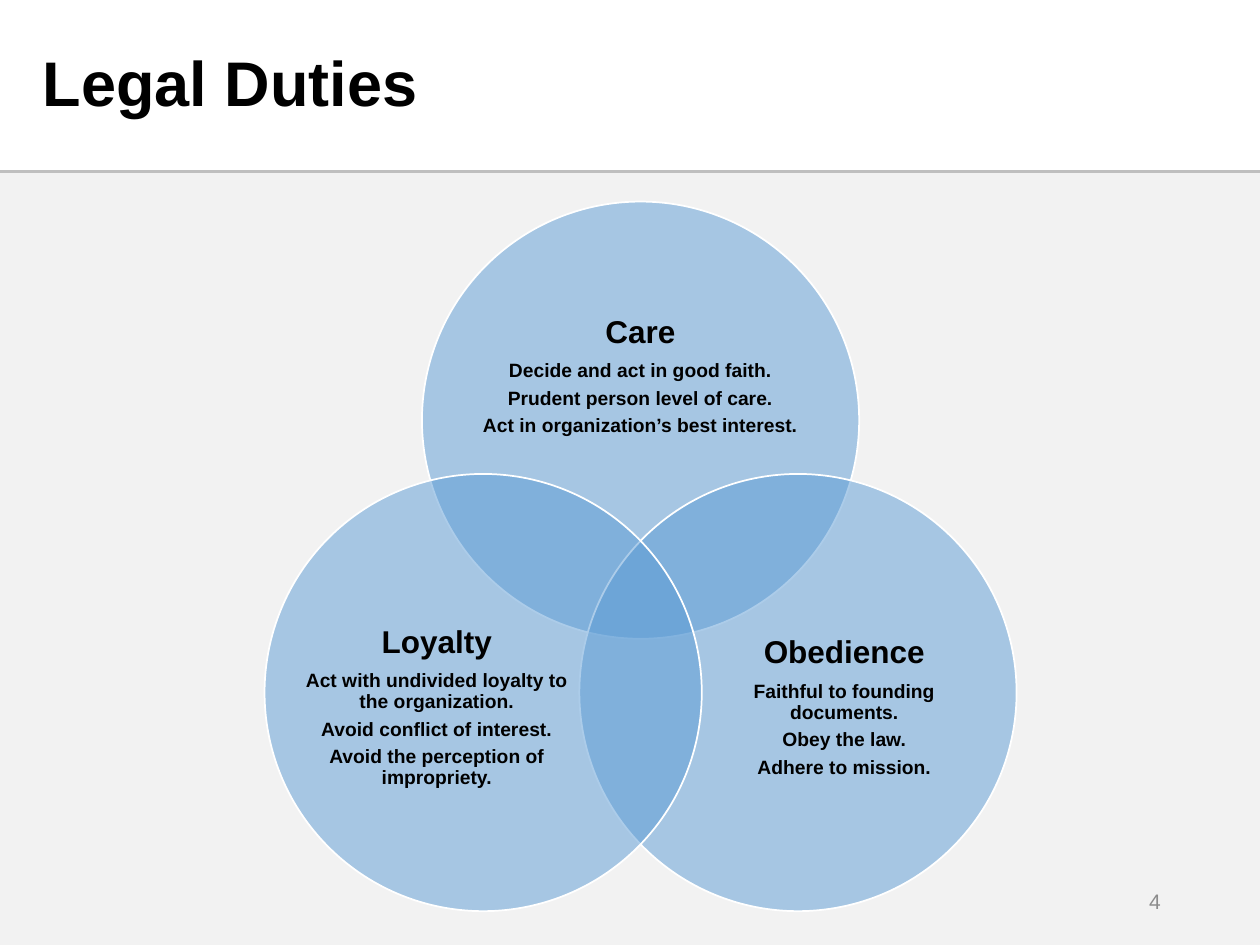
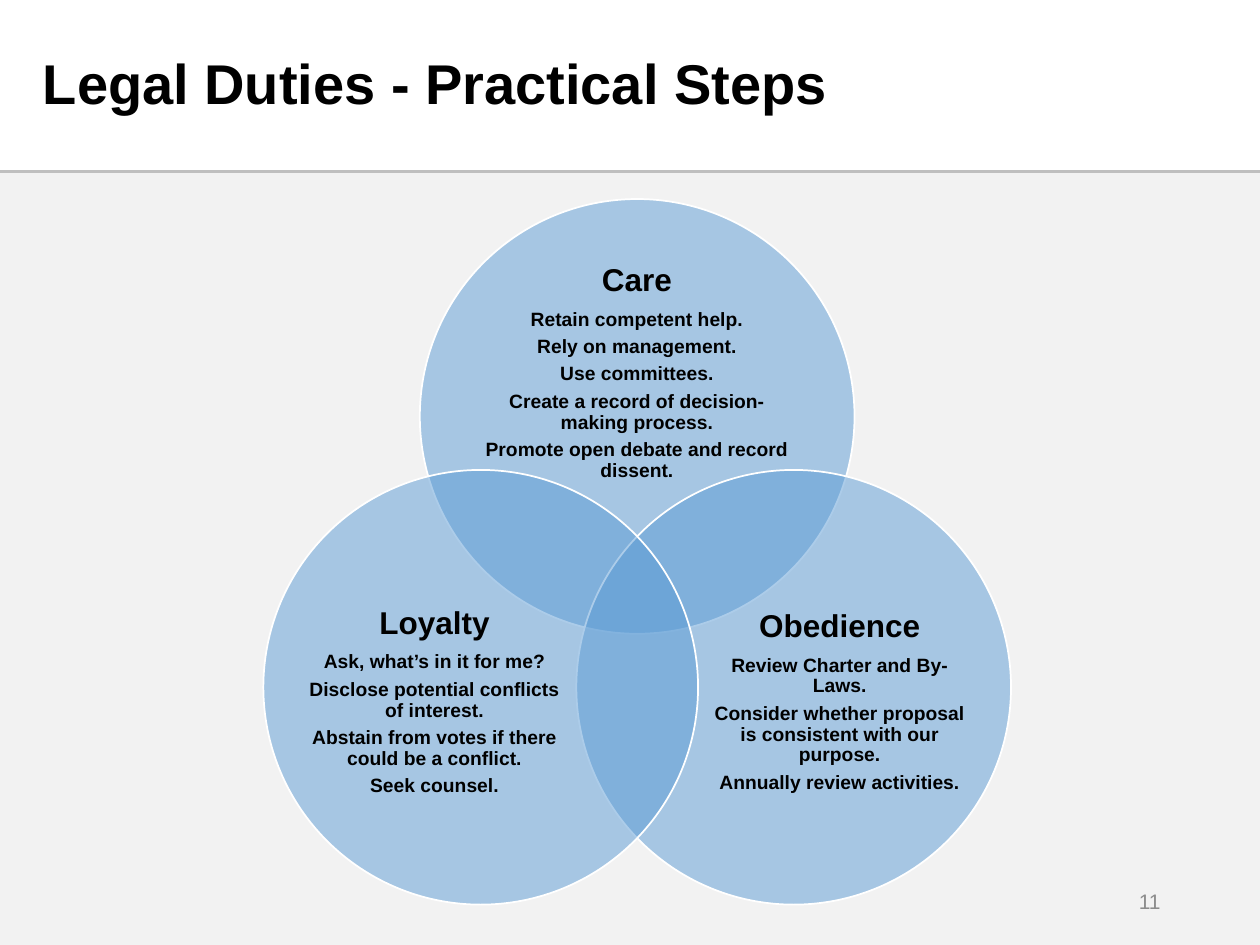
from lxml.etree import SubElement
from pptx import Presentation
from pptx.dml.color import RGBColor
from pptx.enum.shapes import MSO_CONNECTOR, MSO_SHAPE
from pptx.enum.text import MSO_ANCHOR, MSO_AUTO_SIZE, PP_ALIGN
from pptx.oxml.ns import qn
from pptx.util import Inches, Pt

BLACK, WHITE, GREY = "000000", "FFFFFF", "8C8C8C"
PANEL, RULE, CIRCLE = "F2F2F2", "BFBFBF", "5B9BD5"

TITLE = {"size": Pt(36), "bold": True}
HEADING = {"size": Pt(18), "bold": True}
BODY = {"size": Pt(11), "bold": True}
NUMBER = {"size": Pt(12), "bold": False}

# Fractions of the circle diameter: circle offset in the diagram,
# then the text box (left, top, width, height) inside that circle
VENN = {
    "Care": ((0.36, 0), (0.133, 0.175, 0.733, 0.45)),
    "Obedience": ((0.72, 0.623), (0.306, 0.259, 0.6, 0.55)),
    "Loyalty": ((0, 0.623), (0.094, 0.259, 0.6, 0.55)),
}

SLIDES = [
    {
        "title": "Legal Duties", "title_size": 36, "number": "4",
        "venn": (2.1, 1.6, 3.47),
        "duties": {
            "Care": ["Decide and act in good faith.",
                     "Prudent person level of care.",
                     "Act in organization’s best interest."],
            "Obedience": ["Faithful to founding documents.",
                          "Obey the law.",
                          "Adhere to mission."],
            "Loyalty": ["Act with undivided loyalty to the organization.",
                        "Avoid conflict of interest.",
                        "Avoid the perception of impropriety."],
        },
    },
    {
        "title": "Legal Duties - Practical Steps", "title_size": 32, "number": "11",
        "venn": (2.09, 1.58, 3.45),
        "duties": {
            "Care": ["Retain competent help.",
                     "Rely on management.",
                     "Use committees.",
                     "Create a record of decision-making process.",
                     "Promote open debate and record dissent."],
            "Obedience": ["Review Charter and By-Laws.",
                          "Consider whether proposal is consistent with our purpose.",
                          "Annually review activities."],
            "Loyalty": ["Ask, what’s in it for me?",
                        "Disclose potential conflicts of interest.",
                        "Abstain from votes if there could be a conflict.",
                        "Seek counsel."],
        },
    },
]


def rgb(hex_code):
    return RGBColor.from_string(hex_code)


def set_attrs(target, values):
    for name, value in values.items():
        setattr(target, name, value)


def format_text(p, text, font, color=BLACK, **layout):
    r = p.add_run()
    r.text = text
    set_attrs(r.font, {"name": "Arial", **font})
    r.font.color.rgb = rgb(color)
    set_attrs(p, layout)


def add_filled(slide, preset, box, color):
    s = slide.shapes.add_shape(preset, *map(Inches, box))
    s.shadow.inherit = False
    s.fill.solid()
    s.fill.fore_color.rgb = rgb(color)
    return s


def add_text_box(slide, box, **frame):
    tf = slide.shapes.add_textbox(*map(Inches, box)).text_frame
    set_attrs(tf, {"word_wrap": True, "vertical_anchor": MSO_ANCHOR.MIDDLE, **frame})
    return tf


def add_frame(slide, title, title_size, number):
    # Grey panel and the rule above it
    add_filled(slide, MSO_SHAPE.RECTANGLE, (0, 1.37, 10, 6.13), PANEL).line.fill.background()
    rule = slide.shapes.add_connector(
        MSO_CONNECTOR.STRAIGHT, 0, Inches(1.36), Inches(10), Inches(1.36))
    rule.line.color.rgb = rgb(RULE)
    rule.line.width = Pt(1.5)
    SubElement(rule.element.spPr, qn("a:effectLst"))

    # Title
    s = slide.shapes.title
    set_attrs(s, {"left": Inches(0.24), "top": Inches(0.15),
                  "width": Inches(6.93), "height": Inches(1.07)})
    tf = s.text_frame
    set_attrs(tf, {"auto_size": MSO_AUTO_SIZE.NONE, "word_wrap": True,
                   "vertical_anchor": MSO_ANCHOR.MIDDLE})
    format_text(tf.paragraphs[0], title, {**TITLE, "size": Pt(title_size)},
                alignment=PP_ALIGN.LEFT, line_spacing=0.9)

    # Slide number
    tf = add_text_box(slide, (7.06, 6.95, 2.25, 0.4))
    format_text(tf.paragraphs[0], number, NUMBER, GREY, alignment=PP_ALIGN.RIGHT)


def add_duty(slide, left, top, size, text_box, heading, points):
    # Half-transparent circle
    s = add_filled(slide, MSO_SHAPE.OVAL, (left, top, size, size), CIRCLE)
    s.line.color.rgb = rgb(WHITE)
    s.line.width = Pt(1)
    color = s.element.spPr.find(qn("a:solidFill")).find(qn("a:srgbClr"))
    SubElement(color, qn("a:alpha"), val="50000")

    # Heading and points
    dx, dy, width, height = (f * size for f in text_box)
    tf = add_text_box(slide, (left + dx, top + dy, width, height),
                      margin_left=0, margin_top=0, margin_right=0, margin_bottom=0)
    for i, text in enumerate([heading, *points]):
        p = tf.add_paragraph() if i else tf.paragraphs[0]
        font = BODY if i else HEADING
        format_text(p, text, font, alignment=PP_ALIGN.CENTER, line_spacing=0.9,
                    space_after=Pt(0.35 * font["size"].pt))


def add_venn(slide, left, top, size, duties):
    for heading, ((dx, dy), text_box) in VENN.items():
        add_duty(slide, left + dx * size, top + dy * size, size, text_box,
                 heading, duties[heading])


def main():
    prs = Presentation()
    prs.slide_width, prs.slide_height = Inches(10), Inches(7.5)
    for content in SLIDES:
        slide = prs.slides.add_slide(prs.slide_layouts[5])
        add_frame(slide, content["title"], content["title_size"], content["number"])
        add_venn(slide, *content["venn"], content["duties"])
    prs.save("out.pptx")


if __name__ == "__main__":
    main()
